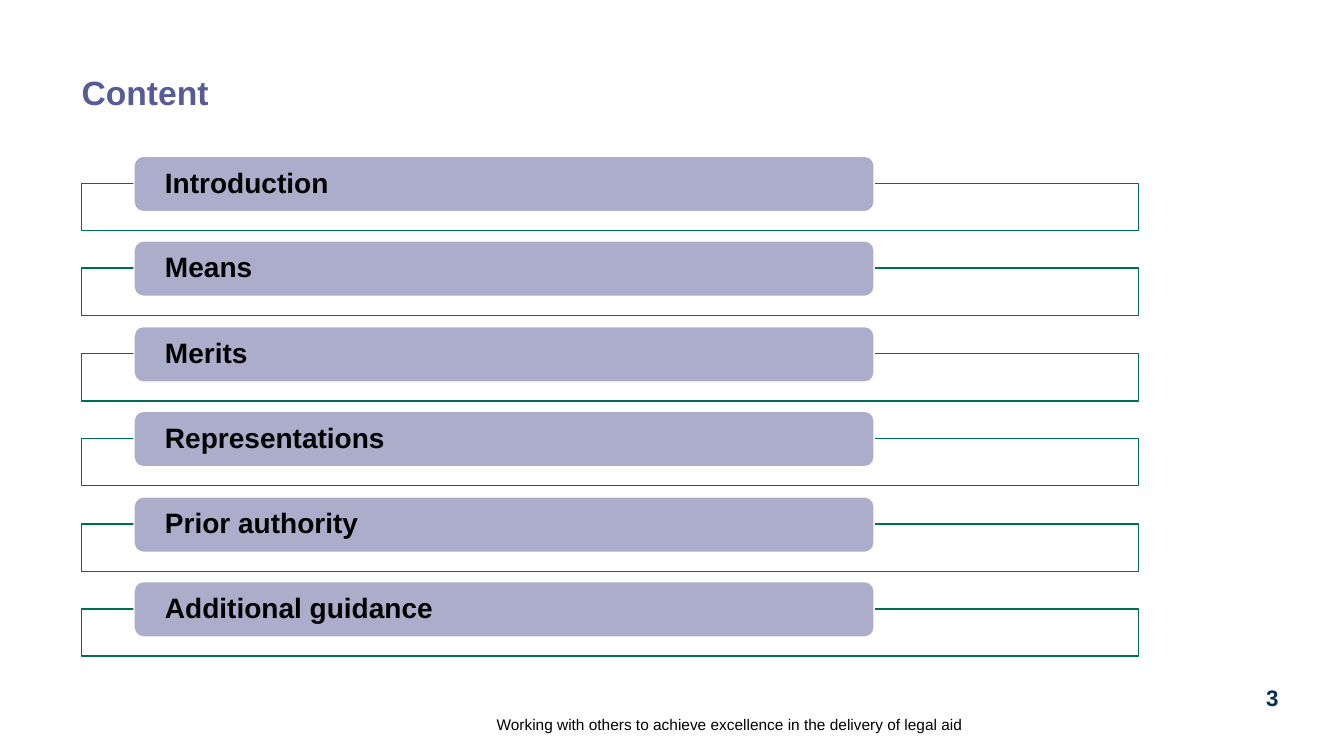
from pptx import Presentation
from pptx import util as u
from pptx.dml.color import RGBColor
from pptx.enum import shapes, text
from pptx.oxml import parse_xml
from pptx.oxml.ns import nsdecls

PX = 9144
COLS = {
    "title": "575C96",
    "bar": "ABADCB",
    "frame": "006D55",
    "white": "FFFFFF",
    "black": "000000",
    "page": "003057",
}
TOPICS = [
    "Introduction",
    "Means",
    "Merits",
    "Representations",
    "Prior authority",
    "Additional guidance",
]
KIND = shapes.MSO_SHAPE
SIDE = text.PP_ALIGN
HOLD = text.MSO_ANCHOR


def px(num):
    return u.Emu(num * PX)


def rgb(name):
    return RGBColor.from_string(COLS[name])


def write(shape, words, size, col, bold=True, side=SIDE.LEFT,
          hold=HOLD.TOP, pad=0, lead=None):
    frame = shape.text_frame
    frame.word_wrap = True
    frame.auto_size = text.MSO_AUTO_SIZE.NONE
    frame.vertical_anchor = hold
    frame.margin_left = frame.margin_right = px(pad)
    frame.margin_top = frame.margin_bottom = 0
    para = frame.paragraphs[0]
    para.alignment = side
    if lead:
        para.line_spacing = lead
    run = para.add_run()
    run.text = words
    font = run.font
    font.name = "Arial"
    font.size = u.Pt(size)
    font.bold = bold
    font.color.rgb = rgb(col)


def head(slide, words, box):
    title = slide.shapes.title
    title.left, title.top, title.width, title.height = map(px, box)
    write(title, words, 24, "title", lead=0.9)


def label(slide, box, words, size, col, **style):
    write(slide.shapes.add_textbox(*map(px, box)), words, size, col, **style)


def block(slide, kind, box, fill, line):
    shape = slide.shapes.add_shape(kind, *map(px, box))
    shape.shadow.inherit = False
    shape.fill.solid()
    shape.fill.fore_color.rgb = rgb(fill)
    shape.line.color.rgb = rgb(line)
    shape.line.width = u.Pt(1)
    return shape


def fade(shape, part):
    tint = shape.fill._xPr.solidFill[0]
    tint.append(parse_xml(f'<a:alpha {nsdecls("a")} val="{part * 1000}"/>'))


def topic(slide, top, words):
    frame = block(slide, KIND.RECTANGLE, (81, top + 27, 1048, 47),
                  "white", "frame")
    fade(frame, 90)
    bar = block(slide, KIND.ROUNDED_RECTANGLE, (133, top, 734, 55),
                "bar", "white")
    write(bar, words, 20, "black", hold=HOLD.MIDDLE, pad=28, lead=0.9)


def main():
    deck = Presentation()
    deck.slide_width, deck.slide_height = px(1333), px(750)
    slide = deck.slides.add_slide(deck.slide_layouts[5])
    head(slide, "Content", (81, 76, 844, 38))
    first, last = 155, 577
    step = (last - first) / (len(TOPICS) - 1)
    for row, words in enumerate(TOPICS):
        topic(slide, first + round(row * step), words)
    label(slide, (210, 692, 745, 36),
          "Working with others to achieve excellence in the delivery of legal aid",
          11, "black", bold=False, side=SIDE.RIGHT, hold=HOLD.BOTTOM)
    label(slide, (1247, 679, 30, 28), "3", 16, "page", side=SIDE.CENTER)
    deck.save("out.pptx")


if __name__ == "__main__":
    main()
